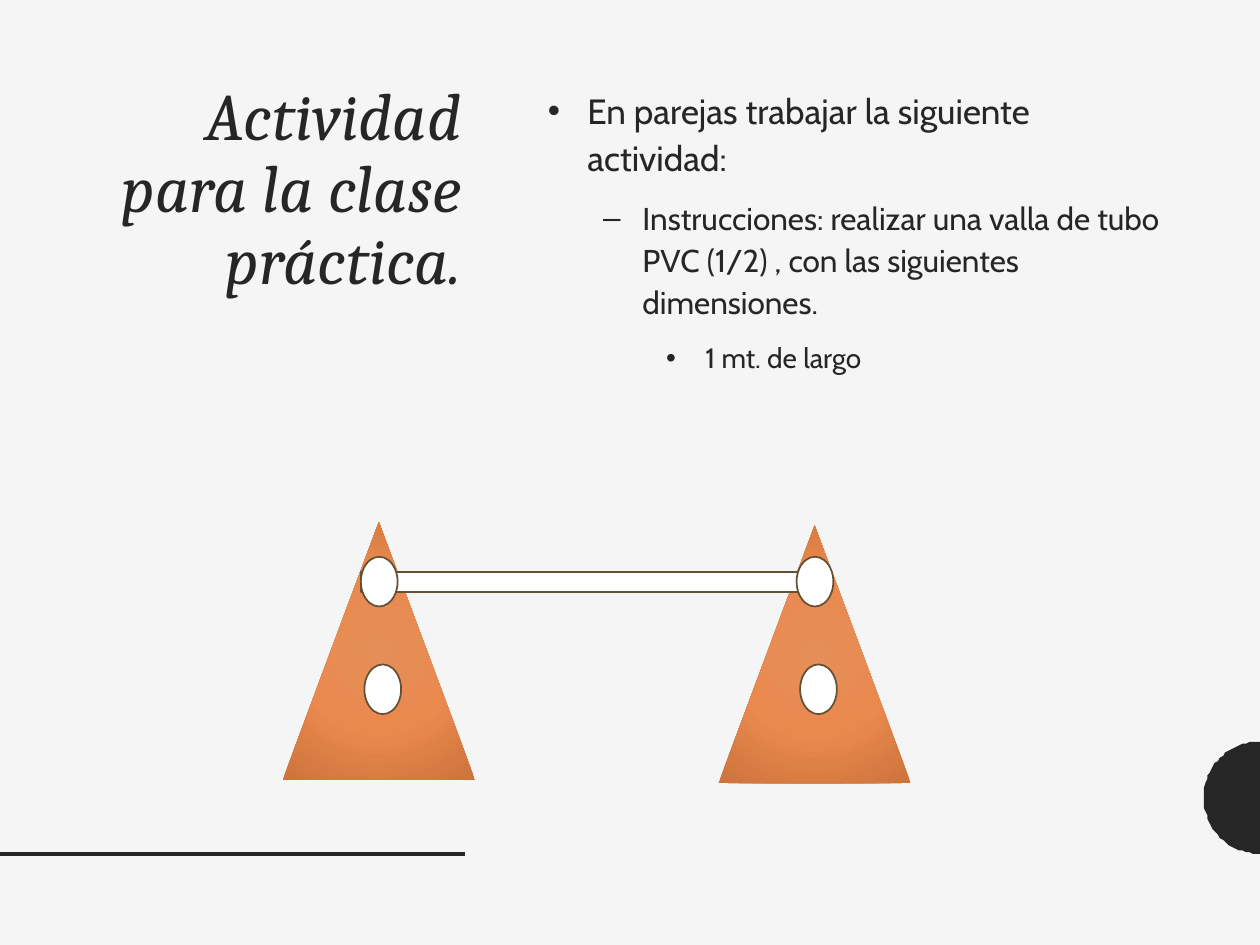
from math import cos, pi, sin

from lxml.etree import SubElement
from pptx import Presentation
from pptx.dml.color import RGBColor
from pptx.enum.shapes import MSO_CONNECTOR as Link, MSO_SHAPE as Kind
from pptx.enum.text import PP_ALIGN as Align
from pptx.oxml import parse_xml
from pptx.oxml.ns import nsdecls, qn
from pptx.util import Pt

INK, PAPER, WHITE, EDGE = "262626", "F5F5F5", "FFFFFF", "645135"
CONE = [(0, "E58E58"), (50, "E9894E"), (100, "CD733B")]


def color(code):
    return RGBColor.from_string(code)


def paint(shape, fill, edge=None):
    shape.shadow.inherit = False
    shape.fill.solid()
    shape.fill.fore_color.rgb = color(fill)
    if edge:
        shape.line.color.rgb = color(edge)
        shape.line.width = Pt(1)
    else:
        shape.line.fill.background()


def add_part(slide, kind, box, fill=WHITE, edge=EDGE):
    part = slide.shapes.add_shape(kind, *map(Pt, box))
    paint(part, fill, edge)
    return part


def add_frame(slide, box):
    frame = slide.shapes.add_textbox(*map(Pt, box)).text_frame
    frame.word_wrap = True
    return frame


def style(para, text, name, size):
    para.text = text
    para.font.name = name
    para.font.size = Pt(size)
    para.font.color.rgb = color(INK)


def add_title(slide, box, text):
    para = add_frame(slide, box).paragraphs[0]
    style(para, text, "Cambria", 38)
    para.font.italic = True
    para.alignment = Align.RIGHT
    para.line_spacing = 0.9


def add_list(slide, box, items):
    """Items are (bullet, left indent, size, text), one for each level."""
    frame = add_frame(slide, box)
    for level, (mark, indent, size, text) in enumerate(items):
        para = frame.paragraphs[0] if level == 0 else frame.add_paragraph()
        style(para, text, "Cabin", size)
        para.level = level
        para.line_spacing = 1.12
        para.space_before = Pt(9)
        props = para._p.get_or_add_pPr()
        props.set("marL", str(Pt(indent)))
        props.set("indent", str(Pt(-22.5)))
        font = SubElement(props, qn("a:buFont"))
        font.set("typeface", "Arial")
        SubElement(props, qn("a:buChar")).set("char", mark)
        # Bullet elements must come before the default run properties.
        props.append(props.find(qn("a:defRPr")))


def add_cone(slide, box):
    cone = add_part(slide, Kind.ISOSCELES_TRIANGLE, box, CONE[0][1], None)
    stops = "".join(
        f'<a:gs pos="{pos * 1000}"><a:srgbClr val="{code}"/></a:gs>'
        for pos, code in CONE)
    grad = parse_xml(
        f'<a:gradFill {nsdecls("a")} rotWithShape="1"><a:gsLst>{stops}</a:gsLst>'
        '<a:path path="circle"><a:fillToRect l="100000" t="100000" '
        'r="100000" b="100000"/></a:path></a:gradFill>')
    props = cone._element.spPr
    props.replace(props.find(qn("a:solidFill")), grad)


def add_hurdle(slide, left, top):
    """Two cones with a bar between them and two holes in each."""
    gap = 249
    for x, y in ((0, 0), (gap, 2)):
        add_cone(slide, (left + x, top + y, 110, 147.5))
    add_part(slide, Kind.RECTANGLE, (left + 44.7, top + 28.8, 260.5, 11.3))
    for x, y in ((44.7, 20), (46.7, 81.5)):
        for shift in (0, gap):
            add_part(slide, Kind.OVAL, (left + x + shift, top + y, 21, 28.4))


def add_decor(slide, width, base):
    """A rule from the left edge and a half disc on the right edge."""
    rule = slide.shapes.add_connector(
        Link.STRAIGHT, Pt(0), Pt(base), Pt(265.7), Pt(base))
    rule.line.color.rgb = color(INK)
    rule.line.width = Pt(2)
    SubElement(rule._element.spPr, qn("a:effectLst"))
    radius, steps = 32.2, 48
    arc = [(width - radius * sin(pi * i / steps),
            base - radius + radius * cos(pi * i / steps))
           for i in range(steps + 1)]
    pen = slide.shapes.build_freeform(*arc[0], scale=Pt(1))
    pen.add_line_segments(arc[1:], close=True)
    paint(pen.convert_to_shape(), INK)


def main():
    deck = Presentation()
    deck.slide_width, deck.slide_height = Pt(720), Pt(540)
    slide = deck.slides.add_slide(deck.slide_layouts[6])
    slide.background.fill.solid()
    slide.background.fill.fore_color.rgb = color(PAPER)
    add_decor(slide, 720, 488)
    add_title(slide, (44.7, 44, 226, 390), "Actividad para la clase práctica.")
    add_list(slide, (306, 44.6, 368.6, 445), [
        ("•", 22.5, 20, "En parejas trabajar la siguiente actividad:"),
        ("–", 54, 18, "Instrucciones: realizar una valla de tubo PVC (1/2) , "
                      "con las siguientes dimensiones."),
        ("•", 90, 16, "1 mt. de largo"),
    ])
    add_hurdle(slide, 161.5, 298.2)
    deck.save("out.pptx")


if __name__ == "__main__":
    main()
